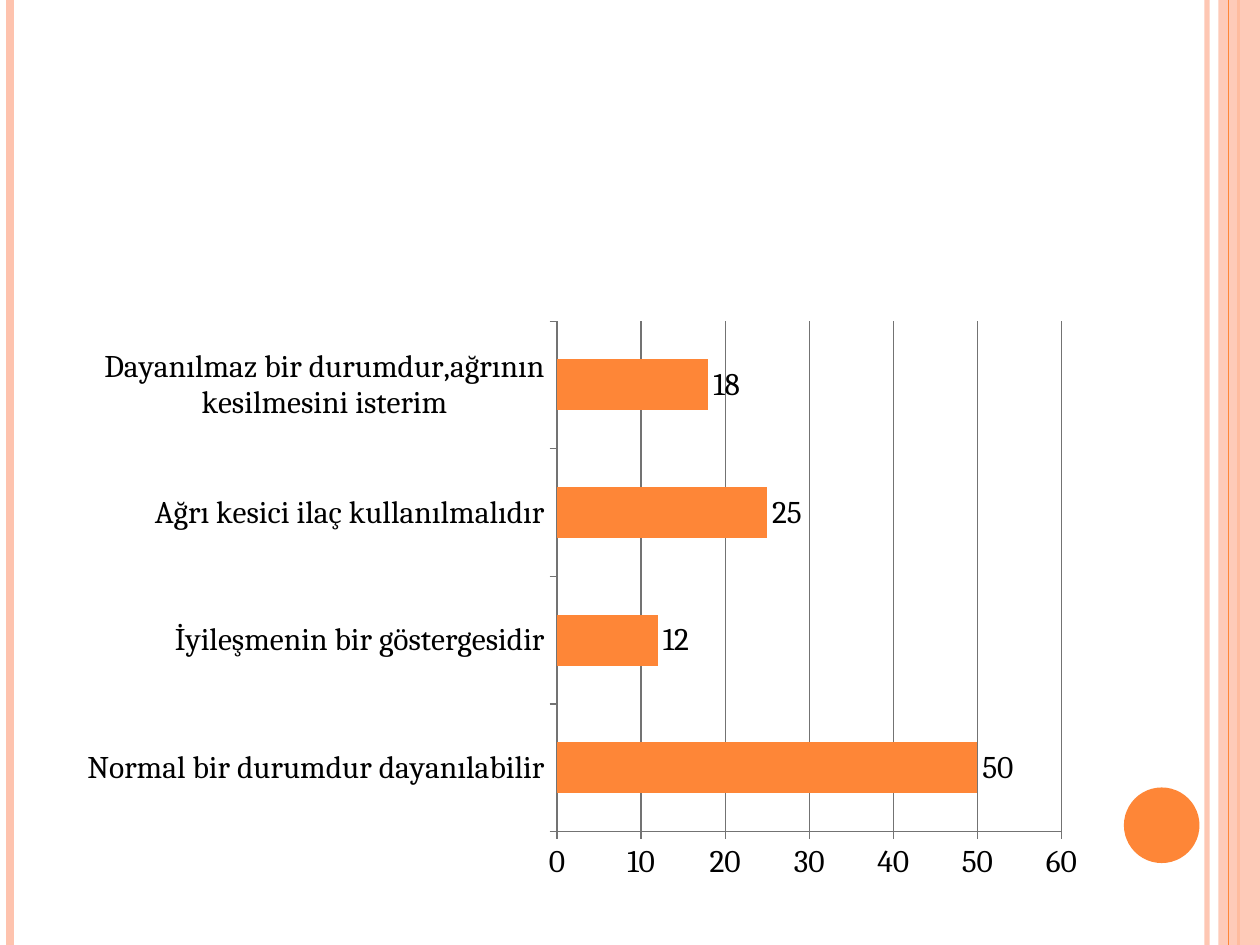
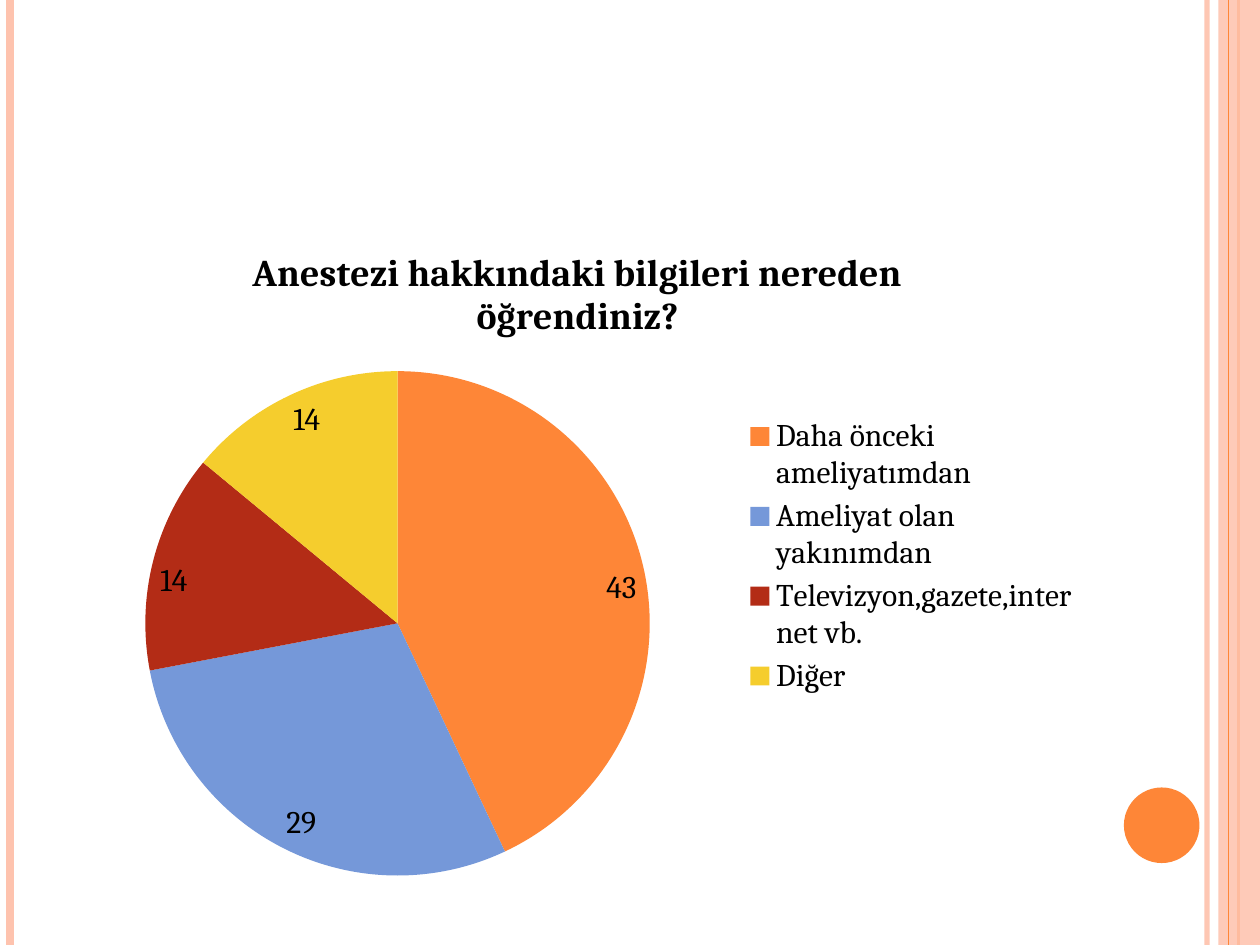
from lxml.etree import SubElement
from pptx import Presentation
from pptx.chart.data import CategoryChartData
from pptx.dml.color import RGBColor
from pptx.enum.chart import (XL_CHART_TYPE, XL_LABEL_POSITION,
                             XL_LEGEND_POSITION, XL_TICK_MARK)
from pptx.enum.shapes import MSO_CONNECTOR, MSO_SHAPE
from pptx.oxml import parse_xml
from pptx.oxml.ns import nsdecls, qn
from pptx.util import Inches, Pt

FONT = "Cambria"
BLACK, GREY = "000000", "737373"
ORANGE, PEACH = "FE8637", "FEC3AE"
SLICES = [ORANGE, "7598D9", "B32C16", "F5CD2D"]
WIDE, HIGH = 10, 7.5
BOX = (0.5, 1.75, 8.17, 5.33)

OPINION = [
    ("Normal bir durumdur dayanılabilir", 50),
    ("İyileşmenin bir göstergesidir", 12),
    ("Ağrı kesici ilaç kullanılmalıdır", 25),
    ("Dayanılmaz bir durumdur,ağrının kesilmesini isterim", 18),
]
QUESTION = "Anestezi hakkındaki bilgileri nereden öğrendiniz?"
ORIGIN = [
    ("Daha önceki ameliyatımdan", 43),
    ("Ameliyat olan yakınımdan", 29),
    ("Televizyon,gazete,internet vb.", 14),
    ("Diğer", 14),
]


def paint(color, code):
    color.rgb = RGBColor.from_string(code)


def fill_with(item, code):
    item.fill.solid()
    paint(item.fill.fore_color, code)


def fade(props, percent):
    color = next(props.iter(qn("a:srgbClr")))
    SubElement(color, qn("a:alpha"), val=str(percent * 1000))


def add_stripe(slide, x, code, width):
    line = slide.shapes.add_connector(
        MSO_CONNECTOR.STRAIGHT, Inches(x), 0, Inches(x), Inches(HIGH))
    paint(line.line.color, code)
    line.line.width = Pt(width)
    SubElement(line.element.spPr, qn("a:effectLst"))
    return line


def add_solid(slide, kind, x, y, w, h, code):
    shape = slide.shapes.add_shape(
        kind, Inches(x), Inches(y), Inches(w), Inches(h))
    fill_with(shape, code)
    shape.line.fill.background()
    shape.shadow.inherit = False
    return shape


def add_frame(slide):
    edge = add_stripe(slide, WIDE - 0.42, PEACH, 3)
    fade(edge.element.spPr, 93)
    add_stripe(slide, 0.08, PEACH, 4.5)
    add_stripe(slide, WIDE - 0.17, ORANGE, 1.5)
    band = add_solid(slide, MSO_SHAPE.RECTANGLE,
                     WIDE - 0.33, 0, 0.33, HIGH, PEACH)
    fade(band.element.spPr, 87)
    add_stripe(slide, WIDE - 0.25, ORANGE, 0.75)
    add_solid(slide, MSO_SHAPE.OVAL, 8.92, 6.25, 0.6, 0.6, ORANGE)


def set_plot(chart, x, y, w, h):
    area = next(chart.element.iter(qn("c:plotArea")))
    for old in area.findall(qn("c:layout")):
        area.remove(old)
    parts = "".join(f'<c:{key} val="{value}"/>' for key, value in
                    zip("xywh", (x, y, w, h)))
    area.insert(0, parse_xml(
        f'<c:layout {nsdecls("c")}><c:manualLayout>'
        '<c:layoutTarget val="inner"/>'
        '<c:xMode val="edge"/><c:yMode val="edge"/>'
        f'{parts}</c:manualLayout></c:layout>'))


def add_graph(slide, box, kind, name, rows, spot):
    data = CategoryChartData()
    data.categories = [label for label, _ in rows]
    data.add_series(name, [value for _, value in rows])
    chart = slide.shapes.add_chart(kind, *map(Inches, box), data).chart
    chart.font.name = FONT
    chart.font.size = Pt(18)
    paint(chart.font.color, BLACK)
    chart.has_title = chart.has_legend = False
    plot = chart.plots[0]
    plot.has_data_labels = True
    plot.data_labels.show_value = True
    plot.data_labels.position = spot
    return chart


def add_bars(slide, box):
    chart = add_graph(slide, box, XL_CHART_TYPE.BAR_CLUSTERED, "",
                      OPINION, XL_LABEL_POSITION.OUTSIDE_END)
    set_plot(chart, 0.48, 0.15, 0.49, 0.76)
    plot = chart.plots[0]
    plot.vary_by_categories = False
    plot.gap_width = 150
    fill_with(plot.series[0].format, ORANGE)
    values = chart.value_axis
    values.minimum_scale, values.maximum_scale = 0, 60
    values.major_unit = 10
    values.has_major_gridlines = True
    for axis in (chart.category_axis, values):
        axis.major_tick_mark = XL_TICK_MARK.OUTSIDE
    for part in (chart.category_axis, values, values.major_gridlines):
        paint(part.format.line.color, GREY)
        part.format.line.width = Pt(0.75)


def add_pie(slide, box):
    chart = add_graph(slide, box, XL_CHART_TYPE.PIE, QUESTION,
                      ORIGIN, XL_LABEL_POSITION.INSIDE_END)
    set_plot(chart, 0.08, 0.22, 0.49, 0.76)
    chart.has_title = True
    frame = chart.chart_title.text_frame
    frame.text = QUESTION
    font = frame.paragraphs[0].runs[0].font
    font.name, font.size, font.bold = FONT, Pt(21.6), True
    paint(font.color, BLACK)
    chart.has_legend = True
    chart.legend.position = XL_LEGEND_POSITION.RIGHT
    chart.legend.include_in_layout = False
    plot = chart.plots[0]
    plot.vary_by_categories = True
    for index, code in enumerate(SLICES):
        fill_with(plot.series[0].points[index].format, code)


def main():
    deck = Presentation()
    deck.slide_width, deck.slide_height = Inches(WIDE), Inches(HIGH)
    for add_content in (add_bars, add_pie):
        slide = deck.slides.add_slide(deck.slide_layouts[6])
        add_frame(slide)
        add_content(slide, BOX)
    deck.save("out.pptx")


if __name__ == "__main__":
    main()
